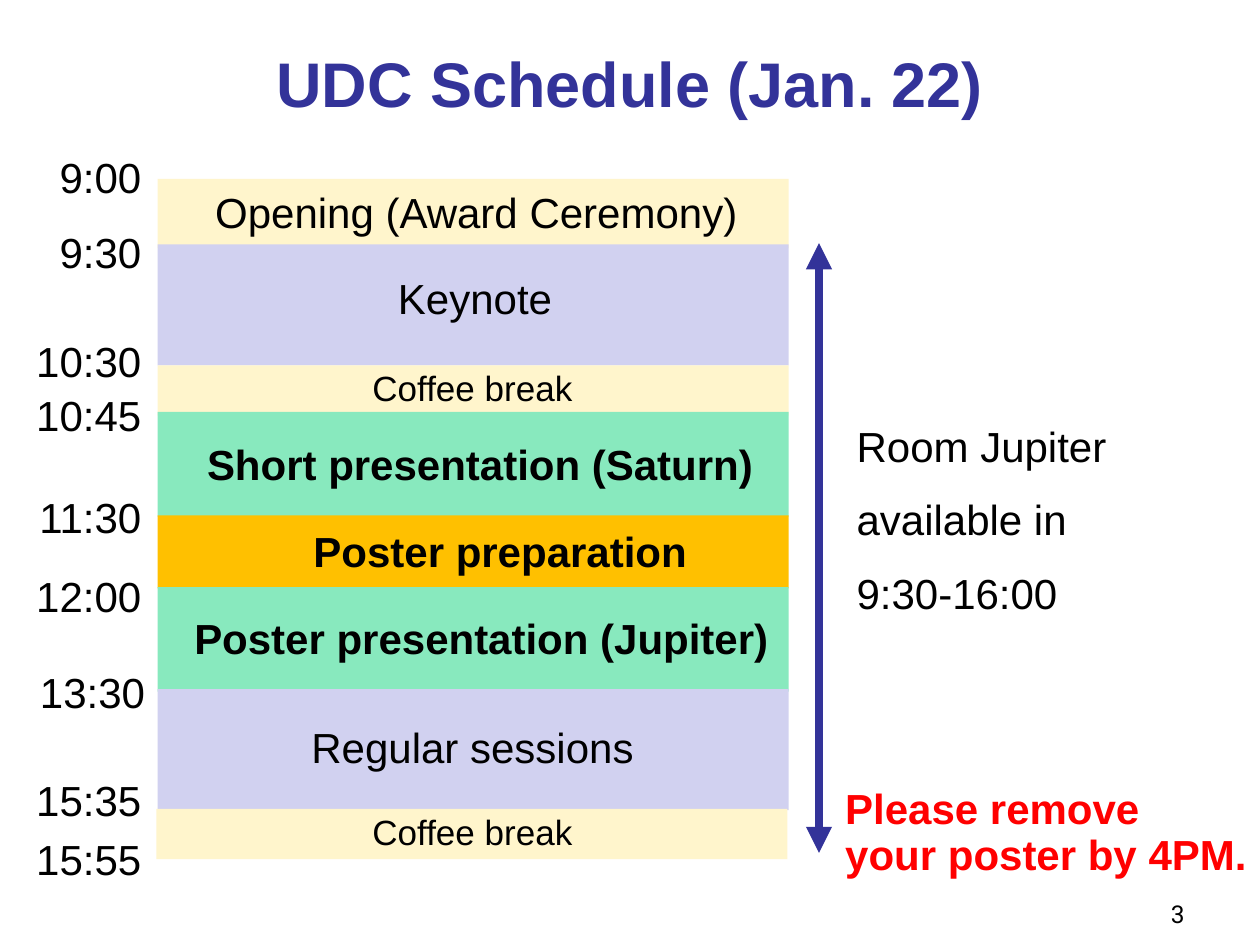
"""Build the UDC schedule slide with its timeline and room notice."""
from dataclasses import dataclass

from lxml import etree
from pptx import Presentation
from pptx import util as u
from pptx.dml.color import RGBColor
from pptx.enum import shapes, text
from pptx.oxml.ns import qn


@dataclass(frozen=True)
class Theme:
    font: str = "Arial"
    number_font: str = "Roboto"
    navy: str = "333399"
    black: str = "000000"
    red: str = "FF0000"
    cream: str = "FFF5CC"
    lilac: str = "D1D1F0"
    mint: str = "88E9BE"
    amber: str = "FFC000"
    title: int = 36
    body: int = 24
    small: int = 20
    number: int = 14


T = Theme()
I = u.Inches
LEFT, RIGHT, CENTER = text.PP_ALIGN.LEFT, text.PP_ALIGN.RIGHT, text.PP_ALIGN.CENTER


def write(sp, lines, size=T.body, color=T.black, bold=False, font=T.font, align=LEFT,
          anchor=text.MSO_ANCHOR.TOP, wrap=False, gap=0, spacing=None):
    tf = sp.text_frame
    tf.word_wrap, tf.vertical_anchor = wrap, anchor
    tf.text = lines
    for i, p in enumerate(tf.paragraphs):
        p.alignment = align
        p.space_before = u.Pt(gap if i else 0)
        if spacing:
            p.line_spacing = u.Pt(spacing)
        f = p.runs[0].font
        f.name, f.size, f.bold = font, u.Pt(size), bold
        f.color.rgb = RGBColor.from_string(color)


prs = Presentation()
prs.slide_width, prs.slide_height = I(10), I(7.5)
s = prs.slides.add_slide(prs.slide_layouts[5])

title = s.shapes.title
title.left, title.top, title.width, title.height = I(0), I(0), I(10), I(1.31)
write(title, "UDC Schedule (Jan. 22)", size=T.title, color=T.navy, bold=True,
      align=CENTER, anchor=text.MSO_ANCHOR.MIDDLE, wrap=True)

sp = s.shapes.add_textbox(I(7.42), I(6.92), I(2.08), I(0.5))
write(sp, "3", size=T.number, font=T.number_font, align=RIGHT,
      anchor=text.MSO_ANCHOR.BOTTOM, wrap=True)

# label, bar left, bar top, bar height, fill, label centre, label top, size, bold
sessions = [
    ("Opening (Award Ceremony)", 1.25, 1.42, 0.55, T.cream, 3.78, 1.43, T.body, False),
    ("Keynote", 1.25, 1.94, 0.96, T.lilac, 3.77, 2.11, T.body, False),
    ("Coffee break", 1.25, 2.9, 0.4, T.cream, 3.75, 2.86, T.small, False),
    ("Short presentation (Saturn)", 1.25, 3.27, 0.83, T.mint, 3.81, 3.43, T.body, True),
    ("Poster preparation", 1.25, 4.09, 0.58, T.amber, 3.97, 4.12, T.body, True),
    ("Poster presentation (Jupiter)", 1.25, 4.66, 0.83, T.mint, 3.82, 4.81, T.body, True),
    ("Regular sessions", 1.25, 5.47, 0.96, T.lilac, 3.75, 5.68, T.body, False),
    ("Coffee break", 1.24, 6.42, 0.4, T.cream, 3.75, 6.38, T.small, False),
]
LABEL_W = 4.8
for label, left, top, height, fill, mid, label_top, size, bold in sessions:
    bar = s.shapes.add_shape(shapes.MSO_SHAPE.RECTANGLE, I(left), I(top), I(5.01), I(height))
    bar.shadow.inherit = False
    bar.fill.solid()
    bar.fill.fore_color.rgb = RGBColor.from_string(fill)
    bar.line.fill.background()
    sp = s.shapes.add_textbox(I(mid - LABEL_W / 2), I(label_top), I(LABEL_W), I(0.5))
    write(sp, label, size=size, bold=bold, align=CENTER)

times = [("9:00", 1.15), ("9:30", 1.75), ("10:30", 2.61), ("10:45", 3.04), ("11:30", 3.85),
         ("12:00", 4.48), ("13:30", 5.24), ("15:35", 6.1), ("15:55", 6.57)]
for time, top in times:
    left = 0.2 if time == "13:30" else 0.17
    sp = s.shapes.add_textbox(I(left), I(top), I(1.05), I(0.5))
    write(sp, time, align=RIGHT)

arrow = s.shapes.add_connector(shapes.MSO_CONNECTOR.STRAIGHT, I(6.5), I(1.93), I(6.5), I(6.77))
arrow.line.color.rgb = RGBColor.from_string(T.navy)
arrow.line.width = u.Pt(5)
ln = arrow.line._get_or_add_ln()
for end in ("a:headEnd", "a:tailEnd"):
    etree.SubElement(ln, qn(end)).set("type", "triangle")
etree.SubElement(arrow._element.spPr, qn("a:effectLst"))

sp = s.shapes.add_textbox(I(6.7), I(3.29), I(2.21), I(1.72))
write(sp, "Room Jupiter\navailable in\n9:30-16:00", gap=13)

sp = s.shapes.add_textbox(I(6.61), I(6.37), I(3.42), I(0.72))
write(sp, "Please remove\nyour poster by 4PM.", color=T.red, bold=True, gap=12, spacing=14)

prs.save("out.pptx")
